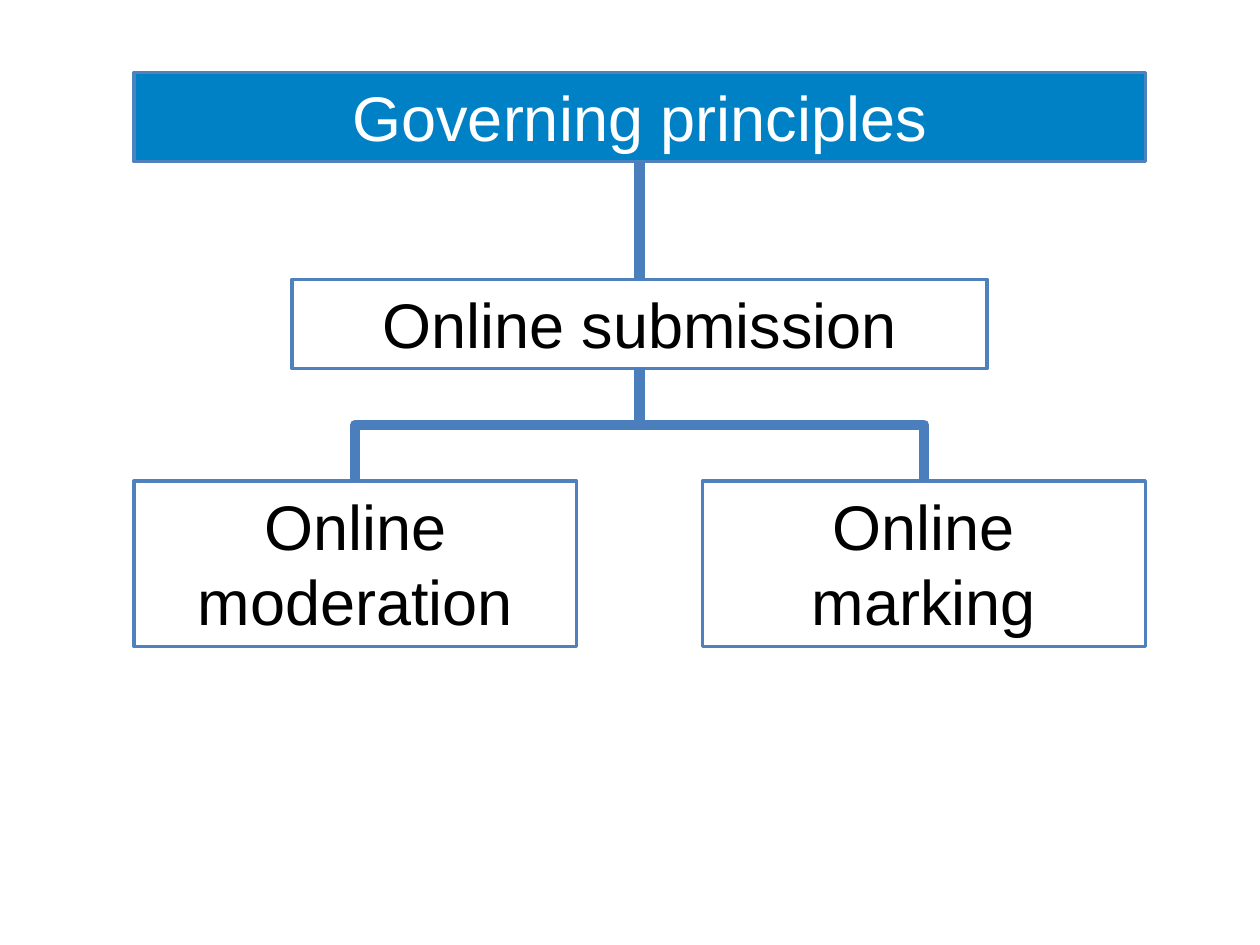
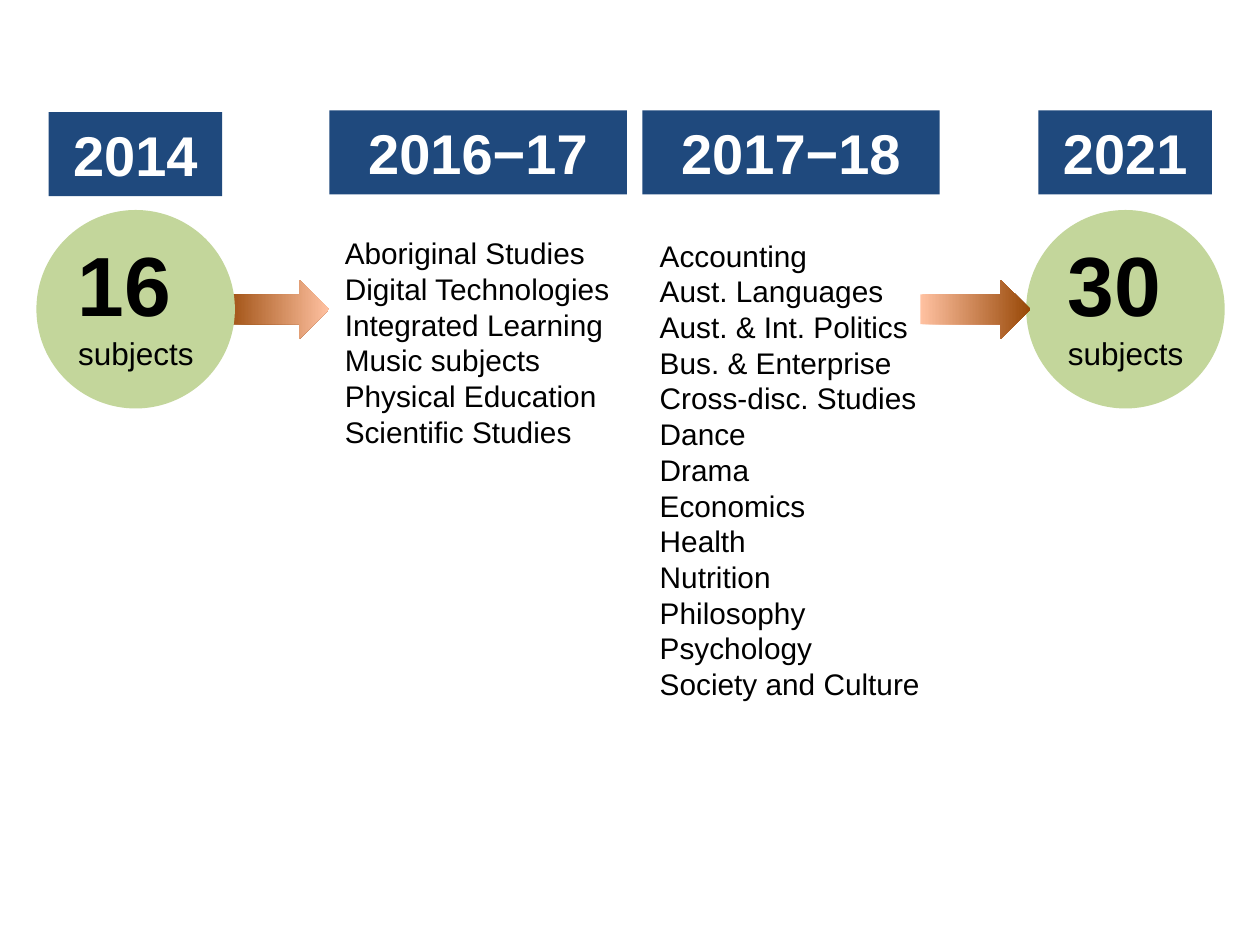
from pptx import Presentation
from pptx.dml.color import RGBColor
from pptx.enum.shapes import MSO_CONNECTOR, MSO_SHAPE
from pptx.enum.text import MSO_ANCHOR, PP_ALIGN
from pptx.oxml.ns import qn
from pptx.util import Pt
from lxml.etree import SubElement

# Shared style
FONT = "Arial"
BLACK, WHITE = "000000", "FFFFFF"
BOX_LINE, LINK, BANNER = "4F81BD", "4B7EBC", "0081C6"
NAVY, GREEN = "1F497D", "C3D69B"
PEACH, BROWN = "FFC1A1", "984807"

EARLY_SUBJECTS = [
    "Aboriginal Studies", "Digital Technologies", "Integrated Learning",
    "Music subjects", "Physical Education", "Scientific Studies",
]
LATER_SUBJECTS = [
    "Accounting", "Aust. Languages", "Aust. & Int. Politics",
    "Bus. & Enterprise", "Cross-disc. Studies", "Dance", "Drama", "Economics",
    "Health", "Nutrition", "Philosophy", "Psychology", "Society and Culture",
]


def rgb(color):
    return RGBColor.from_string(color)


def add_slide(prs):
    return prs.slides.add_slide(prs.slide_layouts[6])


def add_paragraphs(tf, lines, align):
    """Fill a text frame from (text, size, bold, color) lines."""
    for i, (text, size, bold, color) in enumerate(lines):
        p = tf.paragraphs[0] if i == 0 else tf.add_paragraph()
        p.text = text
        p.alignment = align
        p.font.name = FONT
        p.font.size = Pt(size)
        p.font.bold = bold
        p.font.color.rgb = rgb(color)


def add_shape(slide, kind, left, top, width, height, fill=None):
    sp = slide.shapes.add_shape(kind, Pt(left), Pt(top), Pt(width), Pt(height))
    sp.shadow.inherit = False
    sp.line.fill.background()
    if fill:
        sp.fill.solid()
        sp.fill.fore_color.rgb = rgb(fill)
    return sp


def add_text(slide, left, top, width, height, lines, align, inset=None):
    tf = slide.shapes.add_textbox(Pt(left), Pt(top), Pt(width), Pt(height)).text_frame
    tf.word_wrap = True
    if inset is not None:
        tf.margin_left = tf.margin_right = Pt(inset)
        tf.margin_top = tf.margin_bottom = Pt(inset)
    add_paragraphs(tf, lines, align)


# Hierarchy parts
def add_box(slide, text, left, top, width, height, fill=WHITE, color=BLACK):
    sp = add_shape(slide, MSO_SHAPE.RECTANGLE, left, top, width, height, fill)
    sp.line.color.rgb = rgb(BOX_LINE)
    sp.line.width = Pt(2)
    sp.text_frame.vertical_anchor = MSO_ANCHOR.TOP
    add_paragraphs(sp.text_frame, [(text, 36, False, color)], PP_ALIGN.CENTER)
    return sp


def add_link(slide, kind, x1, y1, x2, y2):
    cxn = slide.shapes.add_connector(kind, Pt(x1), Pt(y1), Pt(x2), Pt(y2))
    cxn.line.color.rgb = rgb(LINK)
    cxn.line.width = Pt(6)
    SubElement(cxn._element.spPr, qn("a:effectLst"))
    return cxn


def add_branch(slide, x1, y1, x2, y2):
    """Elbow that leaves downwards: a turned frame around the same centre."""
    cx, cy = (x1 + x2) / 2, (y1 + y2) / 2
    half_w, half_h = (y2 - y1) / 2, abs(x2 - x1) / 2
    cxn = add_link(slide, MSO_CONNECTOR.ELBOW, cx - half_w, cy - half_h,
                   cx + half_w, cy + half_h)
    xfrm = cxn._element.spPr.find(qn("a:xfrm"))
    xfrm.set("rot", str((270 if x2 > x1 else 90) * 60000))
    if x2 > x1:
        xfrm.set("flipH", "1")


# Timeline parts
def add_year(slide, text, left, top, width):
    sp = add_shape(slide, MSO_SHAPE.RECTANGLE, left, top, width, 48, NAVY)
    tf = sp.text_frame
    tf.word_wrap = False
    tf.vertical_anchor = MSO_ANCHOR.MIDDLE
    add_paragraphs(tf, [(text, 32, True, WHITE)], PP_ALIGN.CENTER)


def add_total(slide, number, left):
    add_shape(slide, MSO_SHAPE.OVAL, left, 120, 113.4, 113.4, GREEN)
    lines = [(number + " ", 48, True, BLACK), ("subjects", 18, False, BLACK)]
    add_text(slide, left + 9, 129.6, 95.8, 87, lines, PP_ALIGN.CENTER)


def add_arrow(slide, left, start, end):
    sp = add_shape(slide, MSO_SHAPE.RIGHT_ARROW, left, 159.8, 62.8, 34)
    sp.fill.gradient()
    sp.fill.gradient_angle = 0
    for stop, color in zip(sp.fill.gradient_stops, (start, end)):
        stop.color.rgb = rgb(color)


def add_subjects(slide, subjects, left, top, width, height):
    lines = [(name, 17, False, BLACK) for name in subjects]
    add_text(slide, left, top, width, height, lines, PP_ALIGN.LEFT, inset=0)


def build_principles(prs):
    slide = add_slide(prs)
    left, width, center = 76.5, 578, 365.5
    child_w, child_top = 253, 275
    top, height, bottom = 159.6, 51, 210.6

    submission = add_box(slide, "Online submission", center - 198.5, top, 397, height)
    children = {"Online moderation": left, "Online marking": left + width - child_w}
    for text, x in children.items():
        add_box(slide, text, x, child_top, child_w, 94.5)
    for x in children.values():
        add_branch(slide, center, bottom, x + child_w / 2, child_top)

    banner = add_box(slide, "Governing principles", left, 41.4, width, height, BANNER, WHITE)
    link = add_link(slide, MSO_CONNECTOR.STRAIGHT, center, top, center, 92.4)
    link.begin_connect(submission, 0)
    link.end_connect(banner, 2)


def build_timeline(prs):
    slide = add_slide(prs)
    add_arrow(slide, 125.3, BROWN, PEACH)
    add_total(slide, "16", 20.8)
    for text, left, top, width in (("2014", 27.8, 64.1, 99.2),
                                   ("2016−17", 188.2, 63.1, 170),
                                   ("2017−18", 367, 63.1, 170),
                                   ("2021", 593.4, 63.1, 99.2)):
        add_year(slide, text, left, top, width)
    add_subjects(slide, EARLY_SUBJECTS, 197, 134.2, 152.6, 123.8)
    add_subjects(slide, LATER_SUBJECTS, 377, 135.6, 150, 275)
    add_total(slide, "30", 586.4)
    add_arrow(slide, 526, PEACH, BROWN)


def main():
    prs = Presentation()
    prs.slide_width, prs.slide_height = Pt(720), Pt(540)
    build_principles(prs)
    build_timeline(prs)
    prs.save("out.pptx")


if __name__ == "__main__":
    main()
